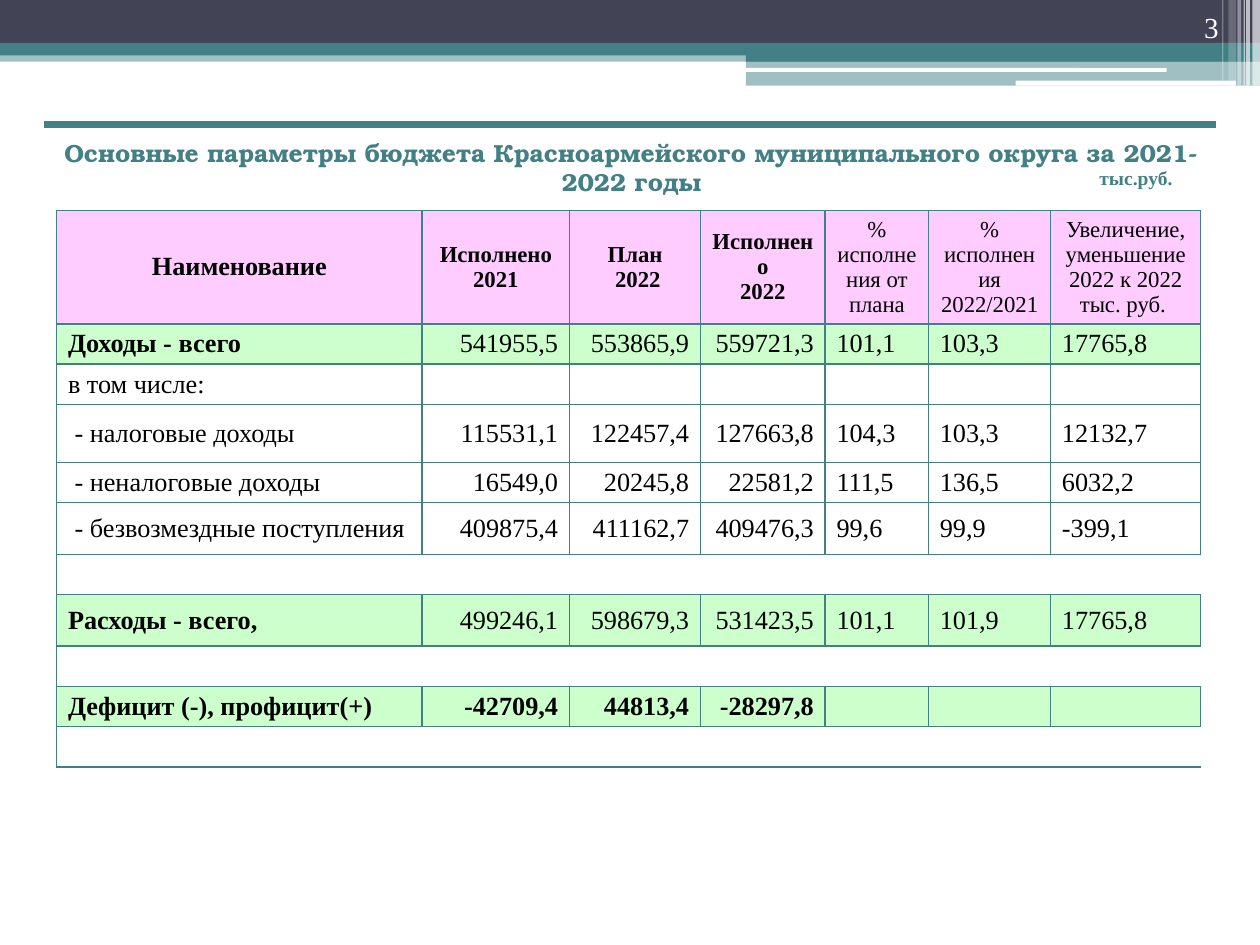
from lxml.etree import SubElement
from pptx import Presentation
from pptx.dml.color import RGBColor
from pptx.enum.shapes import MSO_CONNECTOR, MSO_SHAPE
from pptx.enum.text import MSO_ANCHOR, MSO_AUTO_SIZE, PP_ALIGN
from pptx.oxml.ns import qn
from pptx.util import Inches, Pt

TEAL = RGBColor(0x43, 0x80, 0x86)
SLATE = RGBColor(0x42, 0x44, 0x56)
WHITE = RGBColor(0xFF, 0xFF, 0xFF)
BLACK = RGBColor(0, 0, 0)
PINK = RGBColor(0xFF, 0xCC, 0xFF)
GREEN = RGBColor(0xCC, 0xFF, 0xCC)
SERIF = "Times New Roman"


def add_text(paragraph, text, size, color, bold=False, align=PP_ALIGN.LEFT, font=SERIF):
    paragraph.alignment = align
    run = paragraph.add_run()
    run.text = text
    run.font.name = font
    run.font.size = Pt(size)
    run.font.bold = bold
    run.font.color.rgb = color


def set_borders(cell, visible_sides):
    properties = cell._tc.get_or_add_tcPr()
    for side in "LRTB":
        line = SubElement(properties, qn(f"a:ln{side}"), w=str(Pt(1)))
        if side in visible_sides:
            fill = SubElement(line, qn("a:solidFill"))
            SubElement(fill, qn("a:srgbClr"), val=str(TEAL))
        else:
            SubElement(line, qn("a:noFill"))


presentation = Presentation()
presentation.slide_width, presentation.slide_height = Inches(10), Inches(7.5)
slide = presentation.slides.add_slide(presentation.slide_layouts[5])

# Header bands and stripes: left, top, width, height, colour, opacity in percent
RECTANGLE, ROUNDED = MSO_SHAPE.RECTANGLE, MSO_SHAPE.ROUNDED_RECTANGLE
bands = [
    (RECTANGLE, 0, 0.4, 10, 0.09, TEAL, 50),
    (RECTANGLE, 0, 0, 10, 0.34, SLATE, 100),
    (RECTANGLE, 0, 0.34, 10, 0.1, TEAL, 100),
    (RECTANGLE, 5.92, 0.39, 4.08, 0.1, TEAL, 100),
    (RECTANGLE, 5.92, 0.48, 4.08, 0.2, TEAL, 50),
    (ROUNDED, 5.91, 0.54, 3.35, 0.03, WHITE, 100),
    (ROUNDED, 8.06, 0.64, 1.75, 0.04, WHITE, 100),
    (RECTANGLE, 9.94, 0, 0.06, 0.68, WHITE, 65),
    (RECTANGLE, 9.89, 0, 0.03, 0.68, WHITE, 65),
    (RECTANGLE, 9.87, 0, 0.01, 0.68, WHITE, 60),
    (RECTANGLE, 9.82, 0, 0.03, 0.68, WHITE, 40),
    (RECTANGLE, 9.75, 0, 0.06, 0.64, WHITE, 20),
    (RECTANGLE, 9.7, 0, 0.01, 0.64, WHITE, 30),
]
for kind, left, top, width, height, color, opacity in bands:
    band = slide.shapes.add_shape(kind, Inches(left), Inches(top), Inches(width), Inches(height))
    band.shadow.inherit = False
    band.line.fill.background()
    band.fill.solid()
    band.fill.fore_color.rgb = color
    if opacity < 100:
        color_element = band._element.spPr.find(".//" + qn("a:srgbClr"))
        SubElement(color_element, qn("a:alpha"), val=str(opacity * 1000))

# Title
title = slide.shapes.title
title.left, title.top, title.width, title.height = Inches(0.26), Inches(1.15), Inches(9.5), Inches(0.35)
title.text_frame.auto_size = MSO_AUTO_SIZE.NONE
title.text_frame.vertical_anchor = MSO_ANCHOR.MIDDLE
add_text(title.text_frame.paragraphs[0],
         "Основные параметры бюджета Красноармейского муниципального округа за 2021-2022 годы",
         14.1, TEAL, True, PP_ALIGN.CENTER, "TeX Gyre Bonum")

# Budget table
column_widths = [2.9, 1.17, 1.04, 0.99, 0.82, 0.97, 1.19]
row_heights = [0.9, 0.32, 0.32, 0.46, 0.32, 0.41, 0.32, 0.41, 0.32, 0.32, 0.32]
rows = [
    ["Наименование", "Исполнено 2021", "План\n 2022", "Исполнено\n2022", "% исполнения от плана",
     "% исполнения 2022/2021", "Увеличение, уменьшение 2022 к 2022 тыс. руб. "],
    ["Доходы - всего", "541955,5", "553865,9", "559721,3", "101,1", "103,3", "17765,8"],
    ["в том числе:"],
    [" - налоговые доходы", "115531,1", "122457,4", "127663,8", "104,3", "103,3", "12132,7"],
    [" - неналоговые доходы", "16549,0", "20245,8", "22581,2", "111,5", "136,5", "6032,2"],
    [" - безвозмездные поступления", "409875,4", "411162,7", "409476,3", "99,6", "99,9", "-399,1"],
    [],
    ["Расходы - всего,", "499246,1", "598679,3", "531423,5", "101,1", "101,9", "17765,8"],
    [],
    ["Дефицит (-), профицит(+)", "-42709,4", "44813,4", "-28297,8"],
    [],
]
HEADER, BALANCE = 0, 9
row_fills = {HEADER: PINK, 1: GREEN, 7: GREEN, BALANCE: GREEN}
table = slide.shapes.add_table(len(rows), len(column_widths), Inches(0.45), Inches(1.67),
                               Inches(sum(column_widths)), Inches(sum(row_heights))).table
for column, width in zip(table.columns, column_widths):
    column.width = Inches(width)
for row, height in zip(table.rows, row_heights):
    row.height = Inches(height)

for row_index, texts in enumerate(rows):
    for column_index in range(len(column_widths)):
        cell = table.cell(row_index, column_index)
        cell.vertical_anchor = MSO_ANCHOR.MIDDLE
        cell.margin_left = cell.margin_right = Inches(0.09)
        cell.margin_top = cell.margin_bottom = Inches(0.02)

        # Spacer rows have no vertical lines except at the far left
        if texts:
            set_borders(cell, "LRTB")
        else:
            set_borders(cell, "LTB" if column_index == 0 else "TB")
        if row_index in row_fills:
            cell.fill.solid()
            cell.fill.fore_color.rgb = row_fills[row_index]
        else:
            cell.fill.background()

        if column_index >= len(texts):
            SubElement(cell.text_frame.paragraphs[0]._p, qn("a:endParaRPr"), sz="1500")
            continue
        size = 13 if row_index == HEADER and column_index > 0 else 15
        if row_index == HEADER:
            align, bold = PP_ALIGN.CENTER, column_index < 4
        else:
            align = PP_ALIGN.RIGHT if 1 <= column_index <= 3 else PP_ALIGN.LEFT
            bold = row_index == BALANCE or (row_index in row_fills and column_index == 0)
        for line_index, text in enumerate(texts[column_index].split("\n")):
            frame = cell.text_frame
            paragraph = frame.add_paragraph() if line_index else frame.paragraphs[0]
            add_text(paragraph, text, size, BLACK, bold, align)

# Page number
number_box = slide.shapes.add_textbox(Inches(8.94), Inches(0), Inches(0.83), Inches(0.4))
number_box.text_frame.word_wrap = True
number_box.text_frame.vertical_anchor = MSO_ANCHOR.BOTTOM
add_text(number_box.text_frame.paragraphs[0], "3", 16.6, WHITE, align=PP_ALIGN.RIGHT)

# Unit of measure
unit_box = slide.shapes.add_textbox(Inches(8.62), Inches(0.99), Inches(0.79), Inches(0.79))
unit_box.text_frame.word_wrap = False
unit_box.text_frame.vertical_anchor = MSO_ANCHOR.MIDDLE
unit_box.text_frame.margin_bottom = 0
add_text(unit_box.text_frame.paragraphs[0], "тыс.руб.", 11.1, TEAL, True, PP_ALIGN.CENTER)

# Rule above the title
rule = slide.shapes.add_connector(MSO_CONNECTOR.STRAIGHT, Inches(0.35), Inches(0.99),
                                  Inches(9.65), Inches(0.99))
rule.line.color.rgb = TEAL
rule.line.width = Pt(3.75)
SubElement(rule._element.spPr, qn("a:effectLst"))

presentation.save("out.pptx")
